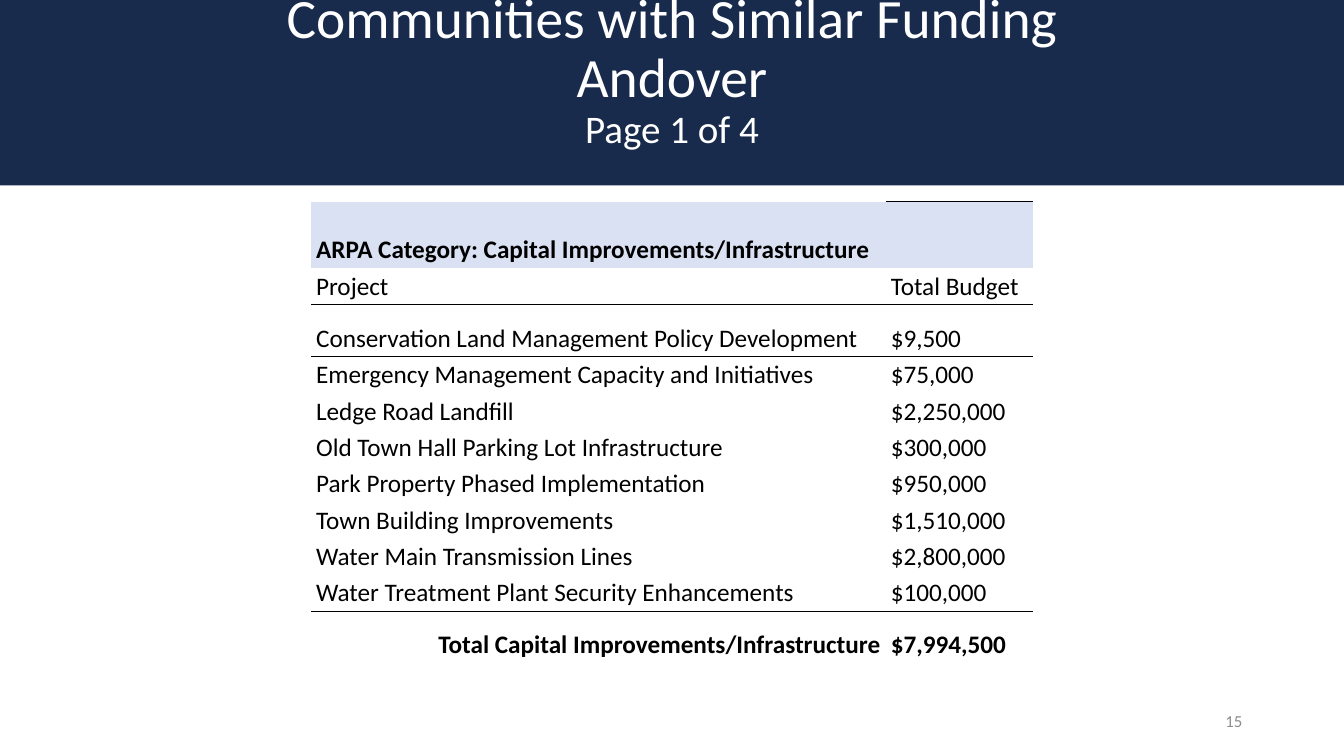
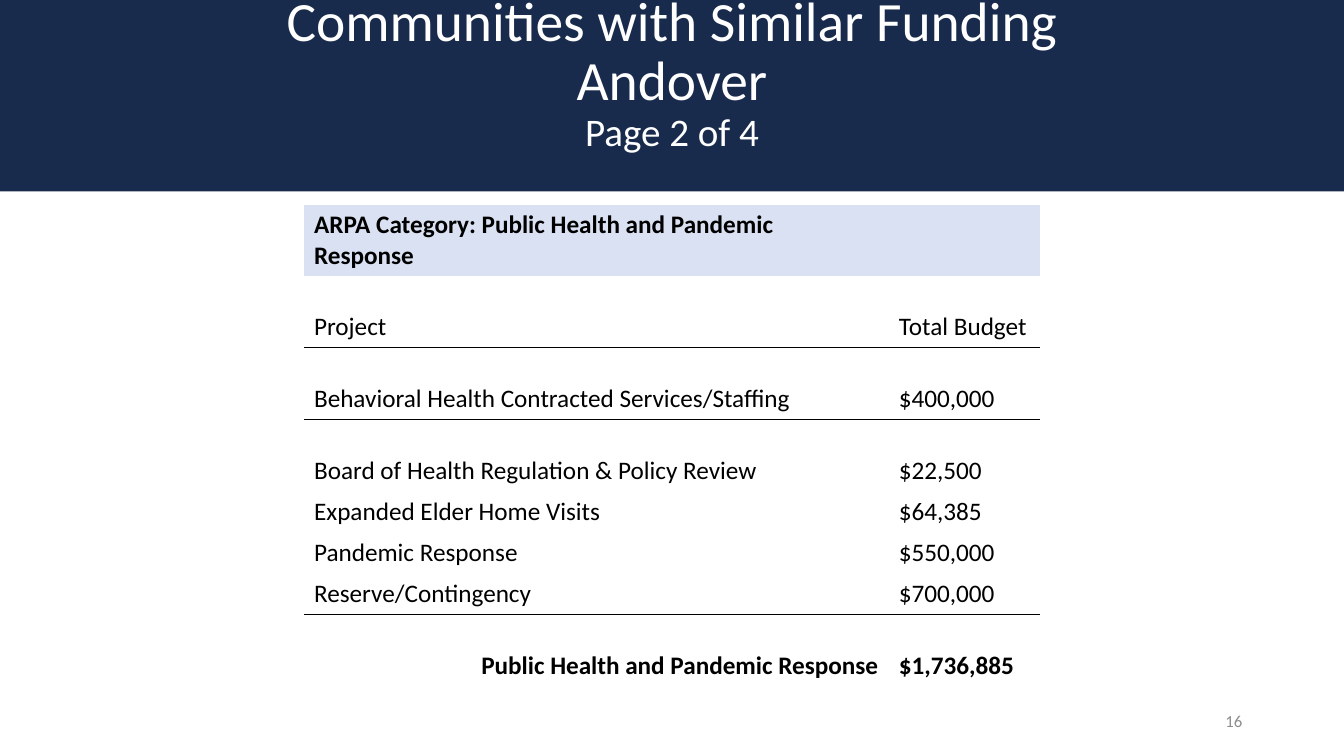
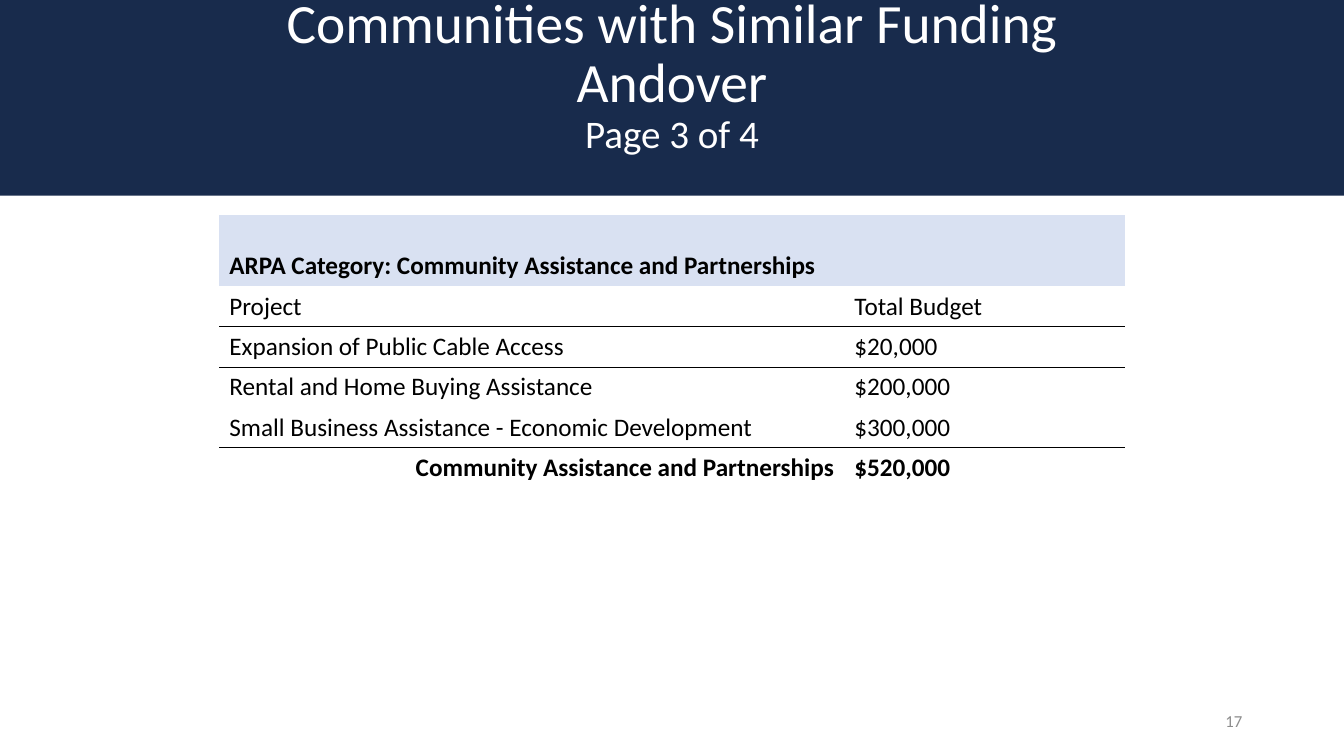
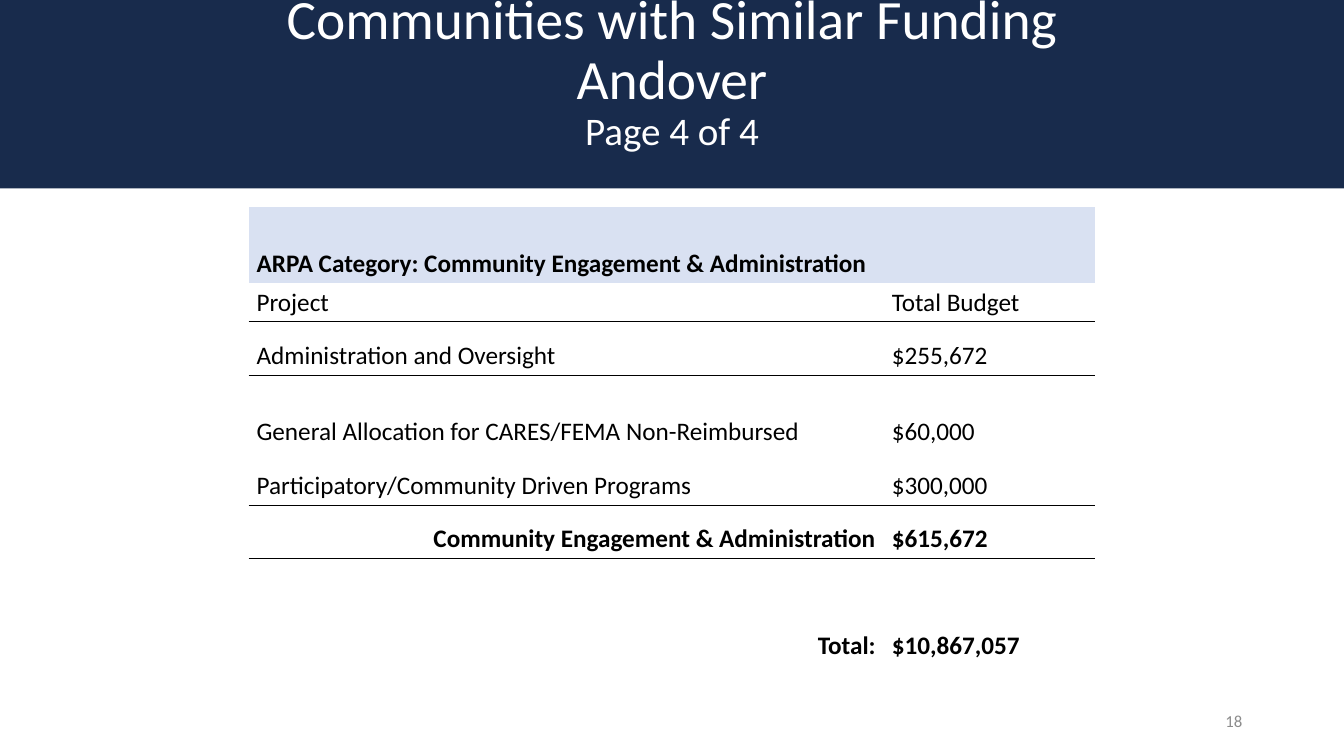
"""Build four budget table slides that share a title band and a page number."""
from lxml.etree import SubElement
from pptx import Presentation
from pptx.dml.color import RGBColor as Rgb
from pptx.enum.text import MSO_ANCHOR as Anchor, MSO_AUTO_SIZE as AutoSize, PP_ALIGN as Align
from pptx.oxml import parse_xml
from pptx.oxml.ns import nsdecls, qn
from pptx.util import Inches, Pt

WIDTH, HEIGHT = 13.33, 7.5
FONT = "Calibri"
COLORS = {"navy": "182B4C", "white": "FFFFFF", "black": "000000",
          "pale": "D9E1F2", "gray": "8C8C8C"}
NO_STYLE = "{2D5ABB26-0587-4C30-8999-92F81FD0307C}"
FIRST_NUMBER = 15
TITLE_LINES = [("Communities with Similar Funding", 39.6), ("Andover", 39.6)]
TITLE_INSETS = {"margin_top": 0.05, "margin_bottom": 0.48}

BUDGETS = [
    {"band": 1.84, "top": 2, "columns": [5.7, 1.46], "inset": (0.05, 0.03),
     "heights": [0.66, 0.36, 0.52] + [0.36] * 7 + [0.52], "top_rule": True,
     "category": "Capital Improvements/Infrastructure",
     "items": [("Conservation Land Management Policy Development", "$9,500"),
               ("Emergency Management Capacity and Initiatives", "$75,000"),
               ("Ledge Road Landfill", "$2,250,000"),
               ("Old Town Hall Parking Lot Infrastructure", "$300,000"),
               ("Park Property Phased Implementation", "$950,000"),
               ("Town Building Improvements", "$1,510,000"),
               ("Water Main Transmission Lines", "$2,800,000"),
               ("Water Treatment Plant Security Enhancements", "$100,000")],
     "totals": [("Total Capital Improvements/Infrastructure", "$7,994,500")]},
    {"band": 1.9, "top": 2.03, "columns": [5.8, 1.5], "inset": (0.1, 0.05),
     "heights": [0.71] * 4 + [0.41] * 3 + [0.71],
     "category": "Public Health and Pandemic Response",
     "items": [("Behavioral Health Contracted Services/Staffing", "$400,000"),
               ("Board of Health Regulation & Policy Review", "$22,500"),
               ("Expanded Elder Home Visits", "$64,385"),
               ("Pandemic Response", "$550,000"),
               ("Reserve/Contingency", "$700,000")],
     "totals": [("Public Health and Pandemic Response", "$1,736,885")]},
    {"band": 1.94, "top": 2.13, "columns": [6.2, 2.78], "inset": (0.1, 0.05),
     "heights": [0.71] + [0.4] * 5,
     "category": "Community Assistance and Partnerships",
     "items": [("Expansion of Public Cable Access", "$20,000"),
               ("Rental and Home Buying Assistance", "$200,000"),
               ("Small Business Assistance - Economic Development", "$300,000")],
     "totals": [("Community Assistance and Partnerships", "$520,000")]},
    {"band": 1.87, "top": 2.05, "columns": [6.3, 2.1], "inset": (0.08, 0.04),
     "heights": [0.76, 0.38, 0.53, 0.76] + [0.53] * 4,
     "category": "Community Engagement & Administration",
     "items": [("Administration and Oversight", "$255,672"),
               ("General Allocation for CARES/FEMA Non-Reimbursed", "$60,000"),
               ("Participatory/Community Driven Programs", "$300,000")],
     "totals": [("Community Engagement & Administration", "$615,672"),
                ("", ""), ("Total:", "$10,867,057")]},
]


def color(name):
    """Return a named colour."""
    return Rgb.from_string(COLORS[name])


def write(para, text, size, ink, align=Align.LEFT, bold=False):
    """Put one formatted run in a paragraph."""
    para.alignment = align
    span = para.add_run()
    span.text = text
    for name, value in {"name": FONT, "size": Pt(size), "bold": bold}.items():
        setattr(span.font, name, value)
    span.font.color.rgb = color(ink)


def place(shape, left, top, width, height):
    """Move and size a shape in inches."""
    for name, value in zip(("left", "top", "width", "height"), (left, top, width, height)):
        setattr(shape, name, Inches(value))


def add_title(page, band, part):
    """Turn the title placeholder into the top band."""
    title = page.shapes.title
    place(title, 0, 0, WIDTH, band)
    title.fill.solid()
    title.fill.fore_color.rgb = color("navy")
    frame = title.text_frame
    frame.auto_size = AutoSize.NONE
    frame.vertical_anchor = Anchor.MIDDLE
    for name, value in TITLE_INSETS.items():
        setattr(frame, name, Inches(value))
    lines = TITLE_LINES + [(f"Page {part} of {len(BUDGETS)}", 27.9)]
    for index, (text, size) in enumerate(lines):
        para = frame.add_paragraph() if index else frame.paragraphs[0]
        para.line_spacing = 0.9
        para.space_before = Pt(0)
        write(para, text, size, "white", Align.CENTER)


def add_number(page, number):
    """Add the page number at the lower right."""
    box = page.shapes.add_textbox(0, 0, 0, 0)
    place(box, 9.42, 6.95, 3, 0.4)
    box.text_frame.word_wrap = True
    box.text_frame.vertical_anchor = Anchor.MIDDLE
    write(box.text_frame.paragraphs[0], str(number), 12, "gray", Align.RIGHT)


def rule(cell, edge):
    """Draw a thin line on the top (T) or bottom (B) edge of a cell."""
    line = parse_xml(f'<a:ln{edge} {nsdecls("a")} w="6350"/>')
    fill = SubElement(line, qn("a:solidFill"))
    SubElement(fill, qn("a:srgbClr"), val=COLORS["black"])
    cell._tc.get_or_add_tcPr().insert(0, line)


def format_cell(cell, fill, inset):
    """Set the fill, anchor and insets of a cell."""
    side, end = map(Inches, inset)
    formats = {"margin_left": side, "margin_right": side, "margin_top": end,
               "margin_bottom": end, "vertical_anchor": Anchor.BOTTOM}
    for name, value in formats.items():
        setattr(cell, name, value)
    cell.fill.solid()
    cell.fill.fore_color.rgb = color(fill)


def add_budget(page, budget):
    """Add a centred budget table with ruled heading and total."""
    heading = [(f"ARPA Category: {budget['category']}", ""), ("Project", "Total Budget")]
    rows = heading + budget["items"] + budget["totals"]
    first_total = len(rows) - len(budget["totals"])
    columns, heights = budget["columns"], budget["heights"]
    width = sum(columns)
    frame = page.shapes.add_table(len(rows), len(columns), 0, 0, 0, 0)
    place(frame, (WIDTH - width) / 2, budget["top"], width, sum(heights))
    table = frame.table
    table.first_row = table.horz_banding = False
    table._tbl.tblPr.find(qn("a:tableStyleId")).text = NO_STYLE
    for column, size in zip(table.columns, columns):
        column.width = Inches(size)
    edges = {1: "B", 2: "T", first_total - 1: "B", first_total: "T"}
    for r, texts in enumerate(rows):
        table.rows[r].height = Inches(heights[r])
        is_total = r >= first_total
        for c, text in enumerate(texts):
            cell = table.cell(r, c)
            format_cell(cell, "white" if r else "pale", budget["inset"])
            if text:
                align = Align.RIGHT if is_total and c == 0 else Align.LEFT
                write(cell.text_frame.paragraphs[0], text, 18, "black", align,
                      r == 0 or is_total)
            if r in edges:
                rule(cell, edges[r])
    if budget.get("top_rule"):
        rule(table.cell(0, 1), "T")


def main():
    """Build and save the deck."""
    deck = Presentation()
    deck.slide_width, deck.slide_height = Inches(WIDTH), Inches(HEIGHT)
    for index, budget in enumerate(BUDGETS):
        page = deck.slides.add_slide(deck.slide_layouts.get_by_name("Title Only"))
        add_title(page, budget["band"], index + 1)
        add_number(page, FIRST_NUMBER + index)
        add_budget(page, budget)
    deck.save("out.pptx")


if __name__ == "__main__":
    main()
